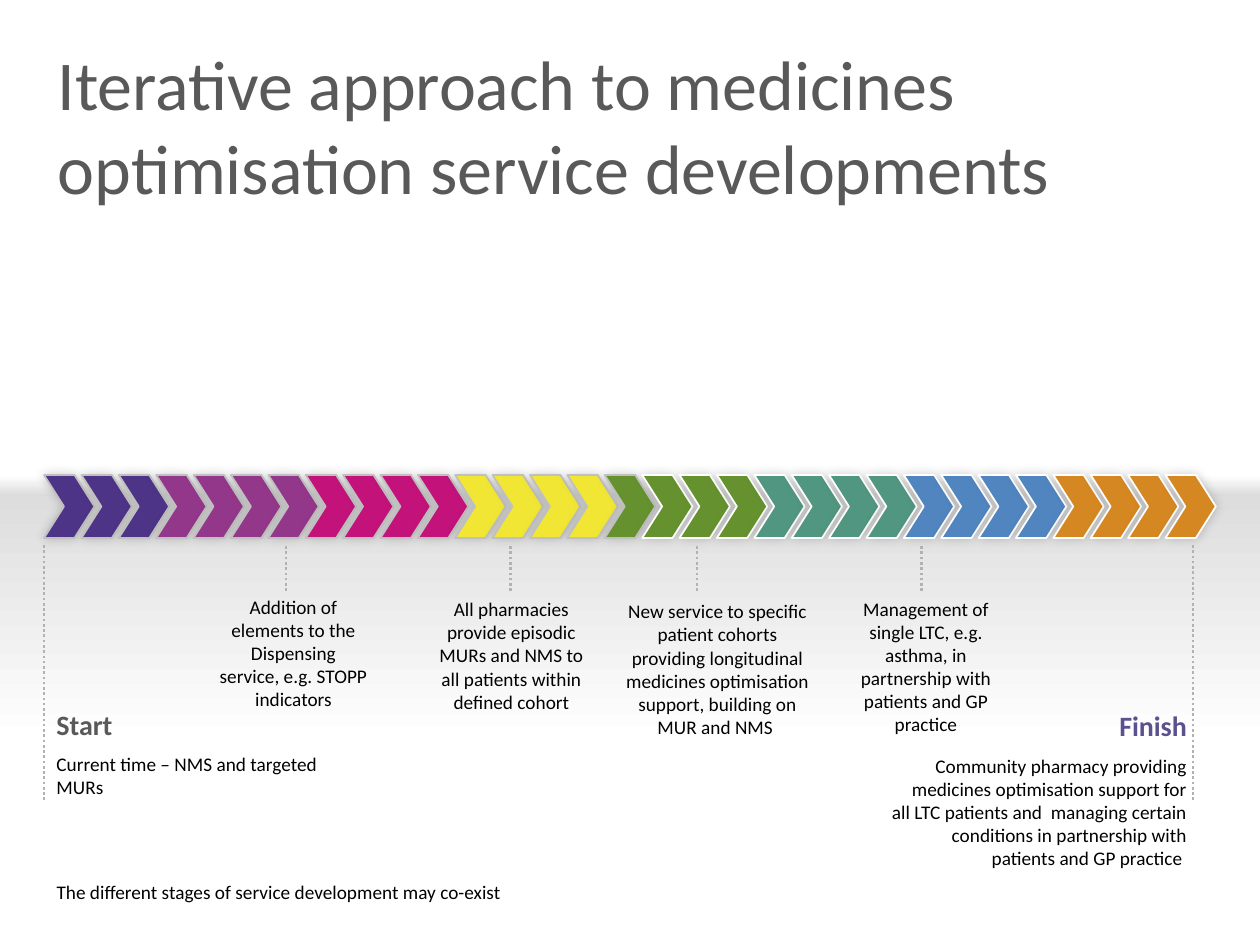
from lxml.etree import SubElement
from pptx import Presentation
from pptx.dml.color import RGBColor
from pptx.enum.dml import MSO_LINE
from pptx.enum.shapes import MSO_CONNECTOR, MSO_SHAPE
from pptx.enum.text import MSO_ANCHOR, MSO_AUTO_SIZE, PP_ALIGN
from pptx.oxml.ns import qn
from pptx.util import Inches, Pt

FONT = "Calibri"
BLACK, GREY, VIOLET = "000000", "595959", "5B518E"

# Chevron grid: one column per chevron
LEFT, BAND_TOP, STEP = 0.35, 3.77, 8.9 / 30
CHEVRON_W, CHEVRON_H = 0.4, 0.5
SILVER_OUTLINED = 16  # the chevrons after these have a white outline
STAGES = [("4E3487", 3), ("93378A", 4), ("C3137B", 4), ("F2E634", 4),
          ("65922E", 4), ("519680", 4), ("5185C0", 4), ("D58721", 4)]

# Dotted markers
MARK_TOP, CALLOUT_END, ENDPOINT_END = 4.32, 4.69, 6.35

# Callouts: column of the marker, box (left, top, width, height), text
CALLOUTS = [
    (6.47, (1.64, 4.71, 1.36, 0.93),
     "Addition of elements to the Dispensing service, e.g. STOPP indicators"),
    (12.47, (3.37, 4.73, 1.36, 0.93),
     "All pharmacies provide episodic MURs and NMS to all patients within "
     "defined cohort"),
    (17.47, (4.83, 4.73, 1.71, 1.13),
     "New service to specific patient cohorts providing longitudinal medicines "
     "optimisation support, building on MUR and NMS "),
    (23.47, (6.66, 4.73, 1.36, 1.11),
     "Management of single LTC, e.g. asthma, in partnership with patients and "
     "GP practice"),
]

# Endpoints: column of the marker, box, alignment, heading, colour, text
ENDPOINTS = [
    (0, (LEFT, 5.61, 2.26, 0.73), PP_ALIGN.LEFT, "Start", GREY,
     "Current time – NMS and targeted MURs"),
    (30.74, (6.97, 5.61, 2.53, 1.29), PP_ALIGN.RIGHT, "Finish", VIOLET,
     "Community pharmacy providing medicines optimisation support for all LTC "
     "patients and  managing certain conditions in partnership with patients "
     "and GP practice "),
]


def rgb(value):
    return RGBColor.from_string(value)


def column_x(column):
    return LEFT + column * STEP


def add_effects(shape):
    return SubElement(shape._element.spPr, qn("a:effectLst"))


def add_gradient_band(slide, prs, top, height, upper, lower):
    sp = slide.shapes.add_shape(MSO_SHAPE.RECTANGLE, 0, Inches(top),
                                prs.slide_width, Inches(height))
    sp.shadow.inherit = False
    sp.line.fill.background()
    sp.fill.gradient()
    sp.fill.gradient_angle = 270
    for stop, position, color in zip(sp.fill.gradient_stops, (0, 1), (upper, lower)):
        stop.position = position
        stop.color.rgb = rgb(color)


def add_chevron(slide, column, color, outline):
    sp = slide.shapes.add_shape(MSO_SHAPE.CHEVRON, Inches(column_x(column)),
                                Inches(BAND_TOP), Inches(CHEVRON_W), Inches(CHEVRON_H))
    sp.adjustments[0] = 0.396
    sp.fill.solid()
    sp.fill.fore_color.rgb = rgb(color)
    sp.line.color.rgb = rgb(outline)
    sp.line.width = Pt(1)
    # Soft shadow around the chevron
    shadow = SubElement(add_effects(sp), qn("a:outerShdw"), blurRad=str(Pt(6)),
                        dist="0", dir="18900000", algn="tl", rotWithShape="0")
    tint = SubElement(shadow, qn("a:srgbClr"), val=BLACK)
    SubElement(tint, qn("a:alpha"), val="20000")


def add_marker(slide, column, bottom):
    x = Inches(column_x(column))
    line = slide.shapes.add_connector(MSO_CONNECTOR.STRAIGHT, x, Inches(bottom),
                                      x, Inches(MARK_TOP))
    line.line.color.rgb = rgb("B2B2B2")
    line.line.width = Pt(1.5)
    line.line.dash_style = MSO_LINE.ROUND_DOT
    add_effects(line)


def add_text(slide, box, paragraphs, align=PP_ALIGN.LEFT):
    """Each paragraph is (text, size, colour, bold)."""
    tf = slide.shapes.add_textbox(*map(Inches, box)).text_frame
    tf.word_wrap = True
    tf.auto_size = MSO_AUTO_SIZE.SHAPE_TO_FIT_TEXT
    tf.vertical_anchor = MSO_ANCHOR.BOTTOM
    tf.margin_left, tf.margin_right = Inches(0.1), Inches(0.08)
    tf.margin_top = tf.margin_bottom = 0
    for i, (text, size, color, bold) in enumerate(paragraphs):
        p = tf.add_paragraph() if i else tf.paragraphs[0]
        p.text = text
        p.alignment = align
        if i:
            p.space_before = Pt(6.5)
        font = p.runs[0].font
        font.name, font.size, font.bold = FONT, Pt(size), bold
        font.color.rgb = rgb(color)
    return tf


def add_title(slide, text):
    tf = add_text(slide, (0.36, 0.36, 9.29, 1.26), [(text, 40, GREY, False)])
    tf.auto_size = MSO_AUTO_SIZE.NONE
    tf.vertical_anchor = MSO_ANCHOR.MIDDLE


def main():
    prs = Presentation()
    prs.slide_width, prs.slide_height = Inches(10), Inches(7.5)
    slide = prs.slides.add_slide(prs.slide_layouts[6])

    # Shaded floor behind the timeline
    add_gradient_band(slide, prs, 3.93, 1.96, "DDDDDD", "FFFFFF")
    add_gradient_band(slide, prs, BAND_TOP, 0.17, "FFFFFF", "DBDBDB")

    add_title(slide, "Iterative approach to medicines optimisation service developments")

    # Timeline of chevrons
    colors = [color for color, count in STAGES for _ in range(count)]
    for column, color in enumerate(colors):
        add_chevron(slide, column, color,
                    "C0C0C0" if column < SILVER_OUTLINED else "FFFFFF")

    # Start and finish
    for column, box, align, heading, color, text in ENDPOINTS:
        add_marker(slide, column, ENDPOINT_END)
        add_text(slide, box, [(heading, 16, color, True), (text, 11, BLACK, False)], align)

    # Stages in between
    for column, box, text in CALLOUTS:
        add_marker(slide, column, CALLOUT_END)
        add_text(slide, box, [(text, 11, BLACK, False)], PP_ALIGN.CENTER)

    # Footnote
    add_text(slide, (LEFT, 6.98, 4.39, 0.19),
             [("The different stages of service development may co-exist", 11, BLACK, False)])

    prs.save("out.pptx")


if __name__ == "__main__":
    main()
